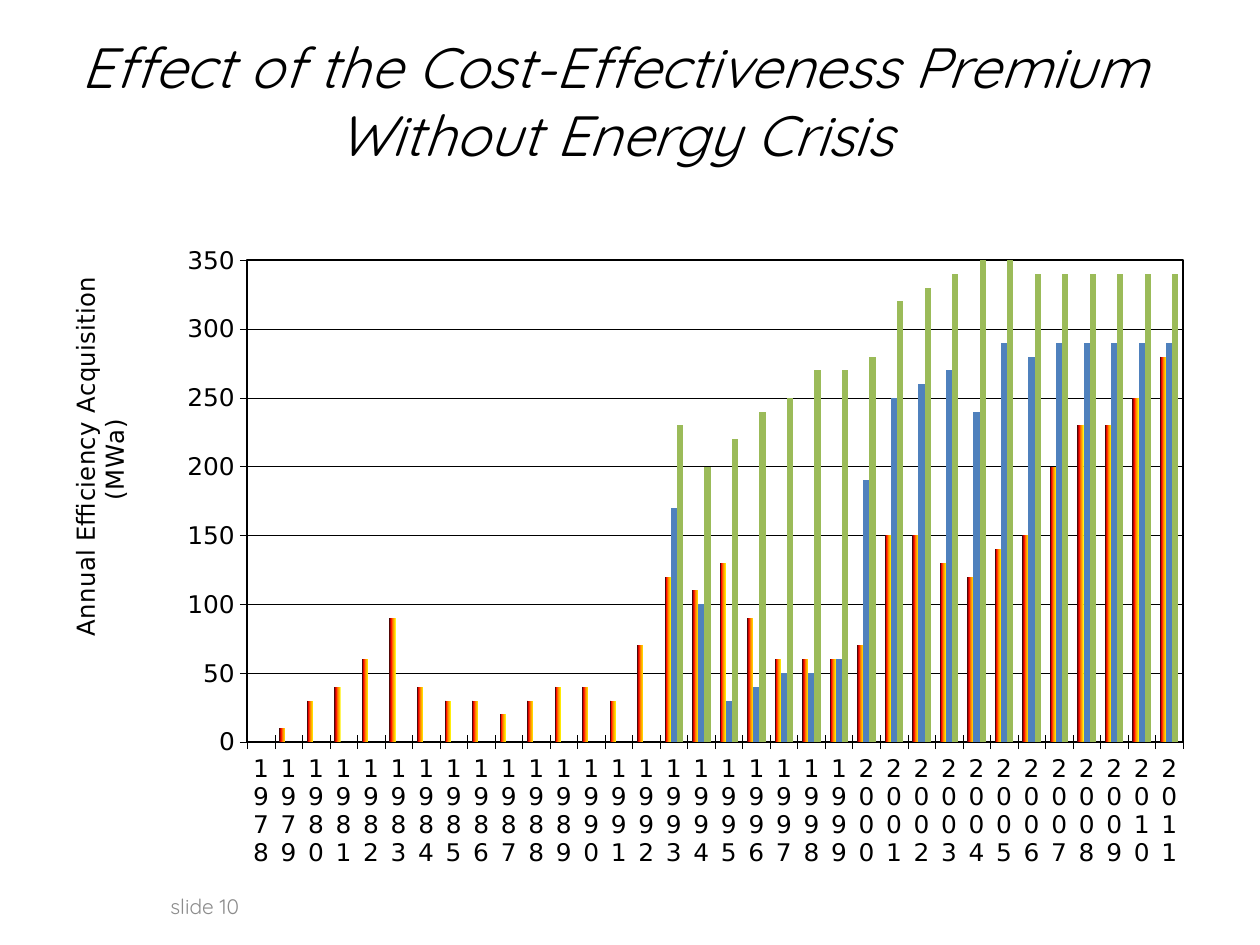
from dataclasses import dataclass

from lxml import etree
from pptx import Presentation
from pptx.chart.data import CategoryChartData
from pptx.dml.color import RGBColor
from pptx.enum.chart import XL_CHART_TYPE, XL_TICK_MARK
from pptx.enum.text import MSO_ANCHOR, PP_ALIGN
from pptx.oxml import parse_xml
from pptx.oxml.ns import nsdecls, qn
from pptx.util import Inches, Pt

CLUSTERED = XL_CHART_TYPE.COLUMN_CLUSTERED
TICK_CROSS = XL_TICK_MARK.CROSS
CENTER = PP_ALIGN.CENTER
MIDDLE = MSO_ANCHOR.MIDDLE

YEARS = range(1978, 2012)
PREMIUM_START = 1993
NO_PREMIUM = [None] * (PREMIUM_START - YEARS[0])
SERIES = {
    "Series 1": [0, 10, 30, 40, 60, 90, 40, 30, 30, 20, 30, 40, 40, 30, 70,
                 120, 110, 130, 90, 60, 60, 60, 70, 150, 150, 130, 120, 140,
                 150, 200, 230, 230, 250, 280],
    "Series 2": NO_PREMIUM + [170, 100, 30, 40, 50, 50, 60, 190, 250, 260,
                              270, 240, 290, 280, 290, 290, 290, 290, 290],
    "Series 3": NO_PREMIUM + [230, 200, 220, 240, 250, 270, 270, 280, 320, 330,
                              340, 350, 350, 340, 340, 340, 340, 340, 340],
}


@dataclass(frozen=True)
class Theme:
    text_font: str = "Quicksand"
    chart_font: str = "DejaVu Sans"
    black: str = "000000"
    gray: str = "8C8C8C"
    columns: tuple = (None, "4F81BD", "9BBB59")
    flame: tuple = ((0, "FFF200"), (45, "FF7A00"), (70, "FF0300"), (100, "4D0808"))
    title_size: float = 32.4
    chart_size: float = 14.2
    footer_size: float = 12
    thin_line: float = 0.25
    frame_line: float = 1


class SlideBuilder:
    def __init__(self, slide, theme):
        self.slide = slide
        self.theme = theme

    def style_font(self, font, name, size, color, italic=False):
        font.name = name
        font.size = Pt(size)
        font.bold = False
        font.italic = italic
        font.color.rgb = RGBColor.from_string(color)

    def style_line(self, line, width):
        line.color.rgb = RGBColor.from_string(self.theme.black)
        line.width = Pt(width)

    def add_text(self, text, left, top, width, height, size, color, italic=False):
        shape = self.slide.shapes.add_textbox(
            Inches(left), Inches(top), Inches(width), Inches(height))
        frame = shape.text_frame
        frame.word_wrap = True
        frame.vertical_anchor = MIDDLE
        paragraph = frame.paragraphs[0]
        paragraph.text = text
        paragraph.alignment = CENTER
        self.style_font(paragraph.font, self.theme.text_font, size, color, italic)

    def add_column_chart(self, left, top, width, height, axis_title):
        data = CategoryChartData()
        data.categories = [str(year) for year in YEARS]
        for name, values in SERIES.items():
            data.add_series(name, values)
        chart = self.slide.shapes.add_chart(
            CLUSTERED, Inches(left), Inches(top), Inches(width), Inches(height),
            data).chart
        chart.has_legend = False
        chart.has_title = False
        self.style_chart_font(chart.font)
        plot = chart.plots[0]
        plot.gap_width = 150
        plot.overlap = 0
        plot.vary_by_categories = False
        for series, color in zip(plot.series, self.theme.columns):
            if color:
                series.format.fill.solid()
                series.format.fill.fore_color.rgb = RGBColor.from_string(color)
            else:
                self.add_flame(series)
        self.style_axes(chart, axis_title)
        self.frame_plot(chart)

    def style_chart_font(self, font):
        self.style_font(font, self.theme.chart_font, self.theme.chart_size,
                        self.theme.black)

    def style_axes(self, chart, axis_title):
        for axis in (chart.category_axis, chart.value_axis):
            axis.major_tick_mark = TICK_CROSS
            self.style_line(axis.format.line, self.theme.thin_line)
            self.style_chart_font(axis.tick_labels.font)
        years = chart.category_axis._element.find(qn("c:txPr"))
        years.find(qn("a:bodyPr")).set("rot", "0")
        axis = chart.value_axis
        axis.minimum_scale = 0
        axis.maximum_scale = 350
        axis.major_unit = 50
        axis.tick_labels.number_format = "#,##0"
        axis.tick_labels.number_format_is_linked = False
        self.style_line(axis.major_gridlines.format.line, self.theme.thin_line)
        frame = axis.axis_title.text_frame
        frame.text = axis_title
        for paragraph in frame.paragraphs:
            paragraph.alignment = CENTER
            self.style_chart_font(paragraph.font)
        body = frame._txBody.find(qn("a:bodyPr"))
        body.set("rot", "-5400000")
        body.set("vert", "horz")
        self.place(axis.axis_title._element, x=0.02, y=0.07)

    def add_flame(self, series):
        stops = "".join(
            f'<a:gs pos="{position * 1000}"><a:srgbClr val="{color}"/></a:gs>'
            for position, color in self.theme.flame)
        properties = series._element.get_or_add_spPr()
        properties.append(parse_xml(
            f'<a:gradFill {nsdecls("a")}><a:gsLst>{stops}</a:gsLst>'
            '<a:lin ang="10800000" scaled="0"/></a:gradFill>'))

    def place(self, element, inner=False, **sizes):
        for layout in element.findall(qn("c:layout")):
            element.remove(layout)
        layout = etree.Element(qn("c:layout"))
        manual = etree.SubElement(layout, qn("c:manualLayout"))
        if inner:
            etree.SubElement(manual, qn("c:layoutTarget")).set("val", "inner")
        for mode in ("xMode", "yMode"):
            etree.SubElement(manual, qn(f"c:{mode}")).set("val", "edge")
        for name, value in sizes.items():
            etree.SubElement(manual, qn(f"c:{name}")).set("val", str(value))
        text = element.find(qn("c:tx"))
        element.insert(0 if text is None else element.index(text) + 1, layout)

    def frame_plot(self, chart):
        area = chart._chartSpace.chart.plotArea
        self.place(area, inner=True, x=0.175, y=0.036, w=0.796, h=0.784)
        area.append(parse_xml(
            f'<c:spPr {nsdecls("c", "a")}><a:noFill/>'
            f'<a:ln w="{Pt(self.theme.frame_line)}"><a:solidFill>'
            f'<a:srgbClr val="{self.theme.black}"/></a:solidFill></a:ln></c:spPr>'))


def main():
    presentation = Presentation()
    presentation.slide_width = Inches(10)
    presentation.slide_height = Inches(7.5)
    theme = Theme()
    slide = presentation.slides.add_slide(presentation.slide_layouts[6])
    builder = SlideBuilder(slide, theme)
    builder.add_text("slide 10", 0.75, 6.94, 1.75, 0.5, theme.footer_size, theme.gray)
    builder.add_text("Effect of the Cost-Effectiveness Premium\vWithout Energy Crisis",
                     0.17, 0.25, 9.42, 1.08, theme.title_size, theme.black, italic=True)
    builder.add_column_chart(0.33, 1.89, 9.33, 4.99,
                             "Annual Efficiency Acquisition\n(MWa)")
    presentation.save("out.pptx")


if __name__ == "__main__":
    main()
